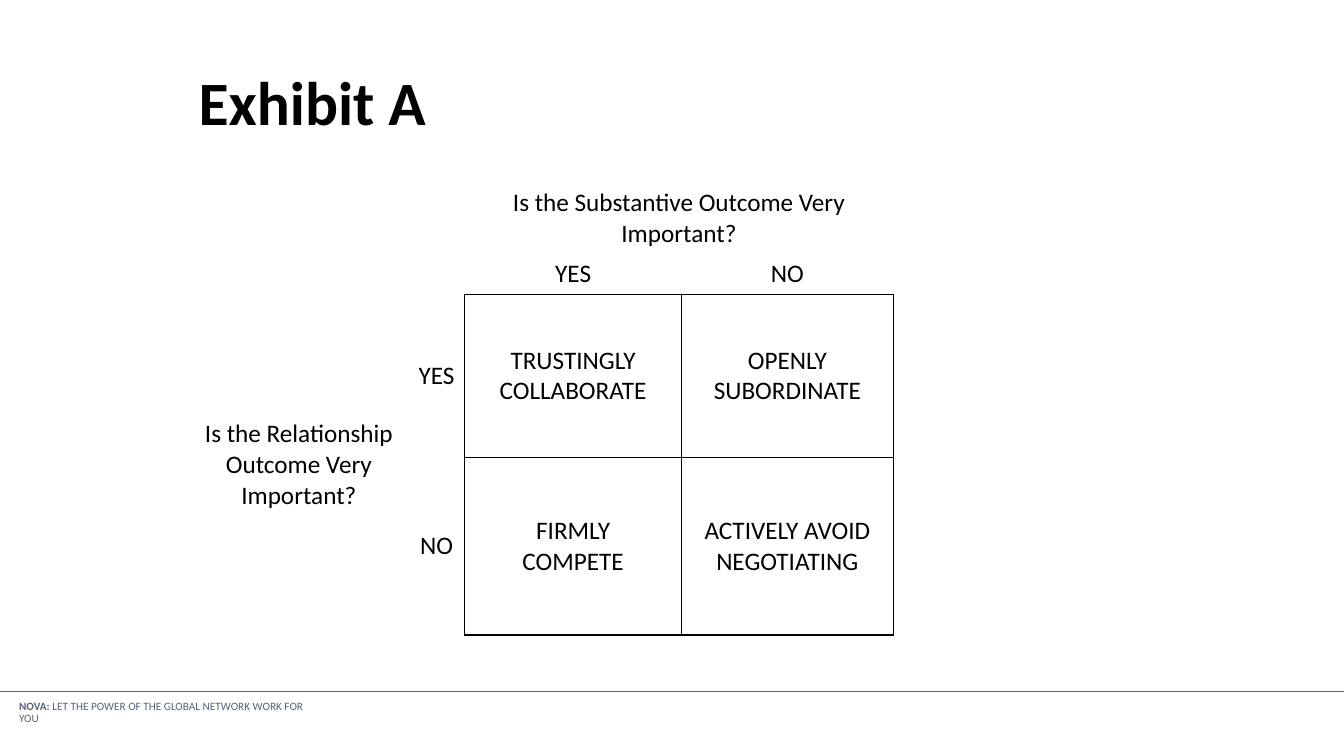
import pptx
import pptx.dml.color
import pptx.enum.shapes
import pptx.enum.text
import pptx.oxml
import pptx.oxml.ns
import pptx.util
from lxml import etree

Inches = pptx.util.Inches
Pt = pptx.util.Pt
RGBColor = pptx.dml.color.RGBColor
PP_ALIGN = pptx.enum.text.PP_ALIGN
MSO_ANCHOR = pptx.enum.text.MSO_ANCHOR
qn = pptx.oxml.ns.qn

BLACK = RGBColor(0x00, 0x00, 0x00)
SLATE = RGBColor(0x55, 0x63, 0x79)

COLUMN_WIDTHS = [2.17, 0.56, 2.15, 2.1]
ROW_HEIGHTS = [0.58, 0.41, 1.62, 1.76]
MATRIX = {(row, column) for row in (2, 3) for column in (2, 3)}
SIDES = {"lnL": (0, -1), "lnR": (0, 1), "lnT": (-1, 0), "lnB": (1, 0)}
SPANS = [((0, 2), (0, 3)), ((2, 0), (3, 0))]
ENTRIES = {
    (0, 2): ["Is the Substantive Outcome Very Important?"],
    (1, 2): ["YES"],
    (1, 3): ["NO"],
    (2, 0): ["Is the Relationship Outcome Very Important?"],
    (2, 1): ["YES"],
    (2, 2): ["TRUSTINGLY", "COLLABORATE"],
    (2, 3): ["OPENLY", "SUBORDINATE"],
    (3, 1): ["NO"],
    (3, 2): ["FIRMLY", "COMPETE"],
    (3, 3): ["ACTIVELY AVOID", "NEGOTIATING"],
}


class ExhibitSlide:
    """Hold the style and the current slide, and draw its elements."""

    font_name = "Calibri"

    def __init__(self, presentation):
        self.slide = presentation.slides.add_slide(presentation.slide_layouts[5])

    def run(self, paragraph, text, size, color=BLACK, bold=False):
        run = paragraph.add_run()
        run.text = text
        run.font.name = self.font_name
        run.font.size = Pt(size)
        run.font.bold = bold
        run.font.color.rgb = color

    def title(self, text, left, top, width, height):
        heading = self.slide.shapes.title
        heading.left, heading.top = Inches(left), Inches(top)
        heading.width, heading.height = Inches(width), Inches(height)
        heading.text_frame.vertical_anchor = MSO_ANCHOR.MIDDLE
        paragraph = heading.text_frame.paragraphs[0]
        paragraph.alignment = PP_ALIGN.LEFT
        paragraph.line_spacing = 0.9
        self.run(paragraph, text, 44, bold=True)

    def rule(self, left, right, height):
        rule = self.slide.shapes.add_connector(
            pptx.enum.shapes.MSO_CONNECTOR.STRAIGHT,
            Inches(left), Inches(height), Inches(right), Inches(height))
        rule.line.color.rgb = SLATE
        rule.line.width = Pt(0.75)
        etree.SubElement(rule._element.spPr, qn("a:effectLst"))

    def footer(self, name, motto, left, top, width, height):
        footer = self.slide.shapes.add_textbox(
            Inches(left), Inches(top), Inches(width), Inches(height))
        footer.text_frame.word_wrap = False
        paragraph = footer.text_frame.paragraphs[0]
        paragraph.line_spacing = 0.9
        self.run(paragraph, name, 8, SLATE, bold=True)
        self.run(paragraph, motto, 8, SLATE)

    def borders(self, cell, row, column):
        properties = cell._tc.get_or_add_tcPr()
        for side, (down, across) in SIDES.items():
            border = etree.SubElement(properties, qn(f"a:{side}"), w=str(Pt(1)))
            if MATRIX & {(row, column), (row + down, column + across)}:
                fill = etree.SubElement(border, qn("a:solidFill"))
                etree.SubElement(fill, qn("a:srgbClr"), val=str(BLACK))
            else:
                etree.SubElement(border, qn("a:noFill"))

    def decision_table(self, left, top):
        frame = self.slide.shapes.add_table(
            len(ROW_HEIGHTS), len(COLUMN_WIDTHS), Inches(left), Inches(top),
            Inches(sum(COLUMN_WIDTHS)), Inches(sum(ROW_HEIGHTS)))
        table = frame.table
        table.first_row = table.horz_banding = False
        for column, width in zip(table.columns, COLUMN_WIDTHS):
            column.width = Inches(width)
        for row, height in zip(table.rows, ROW_HEIGHTS):
            row.height = Inches(height)
        for first, last in SPANS:
            table.cell(*first).merge(table.cell(*last))
        for row in range(len(ROW_HEIGHTS)):
            for column in range(len(COLUMN_WIDTHS)):
                cell = table.cell(row, column)
                self.borders(cell, row, column)
                cell.fill.background()
                cell.vertical_anchor = MSO_ANCHOR.MIDDLE
                cell.margin_left = cell.margin_right = Inches(0.05)
                for index, text in enumerate(ENTRIES.get((row, column), [])):
                    lines = cell.text_frame
                    paragraph = lines.add_paragraph() if index else lines.paragraphs[0]
                    paragraph.alignment = PP_ALIGN.CENTER
                    self.run(paragraph, text, 18)


def main():
    presentation = pptx.Presentation()
    presentation.slide_width = Inches(13.33)
    presentation.slide_height = Inches(7.5)
    exhibit = ExhibitSlide(presentation)
    exhibit.rule(0, 13.33, 6.86)
    exhibit.footer("NOVA: ", "LET THE POWER OF THE GLOBAL NETWORK WORK FOR YOU",
                   0.09, 6.9, 3.19, 0.22)
    exhibit.title("Exhibit A", 1.87, 0.59, 9.56, 0.92)
    exhibit.decision_table(1.88, 1.81)
    presentation.save("out.pptx")


if __name__ == "__main__":
    main()
